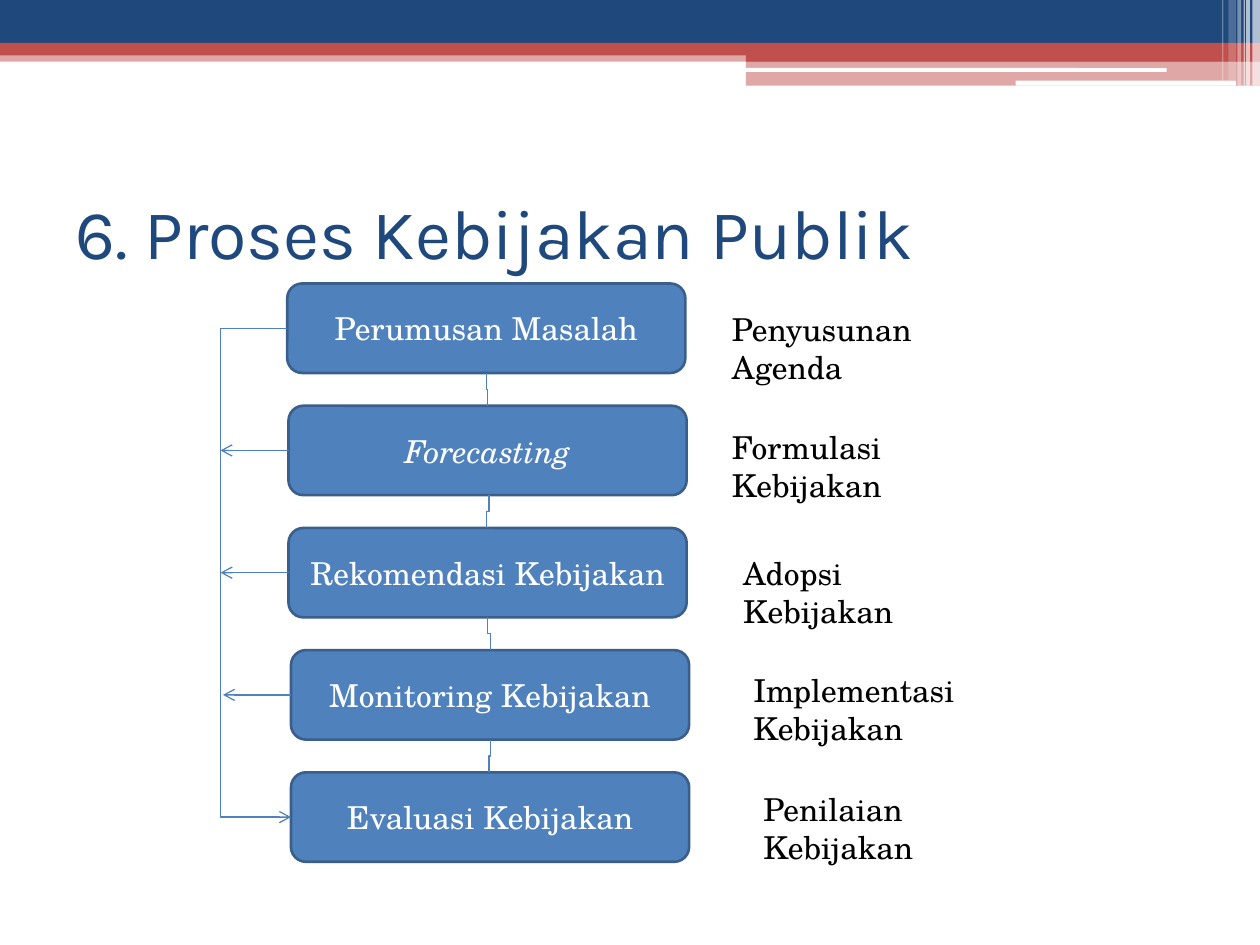
from lxml.etree import SubElement
from pptx import Presentation
from pptx.dml.color import RGBColor
from pptx.enum.shapes import MSO_CONNECTOR, MSO_SHAPE
from pptx.enum.text import MSO_ANCHOR, PP_ALIGN
from pptx.oxml.ns import qn
from pptx.util import Inches, Pt

NAVY, RED, WHITE, BLUE = "1F497D", "C0504D", "FFFFFF", "4F81BD"
BODY_FONT = "TeX Gyre Schola"
RECT, ROUND = MSO_SHAPE.RECTANGLE, MSO_SHAPE.ROUNDED_RECTANGLE

# Header decoration: shape, left, top, width, height, colour, opacity in percent
HEADER = [
    (RECT, 0, 0.4, 10, 0.09, RED, 50),
    (RECT, 0, 0, 10, 0.34, NAVY, 100),
    (RECT, 0, 0.34, 10, 0.1, RED, 100),
    (RECT, 5.92, 0.39, 4.08, 0.1, RED, 100),
    (RECT, 5.92, 0.48, 4.08, 0.2, RED, 50),
    (ROUND, 5.91, 0.54, 3.35, 0.03, WHITE, 100),
    (ROUND, 8.06, 0.64, 1.75, 0.04, WHITE, 100),
    (RECT, 9.94, 0, 0.06, 0.68, WHITE, 65),
    (RECT, 9.89, 0, 0.03, 0.68, WHITE, 65),
    (RECT, 9.87, 0, 0.01, 0.68, WHITE, 60),
    (RECT, 9.82, 0, 0.03, 0.68, WHITE, 40),
    (RECT, 9.75, 0, 0.06, 0.64, WHITE, 20),
    (RECT, 9.7, 0, 0.01, 0.64, WHITE, 30),
]
TITLE = "6. Proses Kebijakan Publik"
# Steps: text, italic, left
STEPS = [
    ("Perumusan Masalah", False, 2.28),
    ("Forecasting", True, 2.29),
    ("Rekomendasi Kebijakan", False, 2.29),
    ("Monitoring Kebijakan", False, 2.31),
    ("Evaluasi Kebijakan", False, 2.31),
]
# Policy stages: text, left, top, width
STAGES = [
    ("Penyusunan Agenda", 5.71, 2.41, 2.26),
    ("Formulasi Kebijakan", 5.71, 3.35, 2.23),
    ("Adopsi Kebijakan", 5.8, 4.35, 1.93),
    ("Implementasi Kebijakan", 5.88, 5.28, 2.62),
    ("Penilaian Kebijakan", 5.96, 6.22, 2.16),
]
LINKS = [(3.86, 3.87), (3.88, 3.86), (3.87, 3.89), (3.89, 3.88)]  # x from, x to
FEEDBACK_ENDS = [1.75, 1.75, 1.77]
BOX_TOP, BOX_W, BOX_H, PITCH = 2.25, 3.16, 0.71, 0.97
LOOP_X = 1.75


def rgb(color):
    return RGBColor.from_string(color)


def add_block(kind, left, top, width, height, color, opacity=100):
    sp = s.shapes.add_shape(kind, Inches(left), Inches(top), Inches(width), Inches(height))
    sp.shadow.inherit = False
    sp.fill.solid()
    sp.fill.fore_color.rgb = rgb(color)
    sp.line.fill.background()
    if opacity < 100:
        clr = sp.fill._xPr.find(qn("a:solidFill"))[0]
        SubElement(clr, qn("a:alpha"), val=str(opacity * 1000))
    return sp


def add_run(tf, text, size, font, color, italic=None, align=PP_ALIGN.LEFT):
    p = tf.paragraphs[0]
    p.alignment = align
    r = p.add_run()
    r.text = text
    r.font.size, r.font.name, r.font.italic = Pt(size), font, italic
    r.font.color.rgb = rgb(color)


def add_line(kind, x1, y1, x2, y2, arrow=False):
    cx = s.shapes.add_connector(kind, Inches(x1), Inches(y1), Inches(x2), Inches(y2))
    cx.line.color.rgb = rgb(BLUE)
    cx.line.width = Pt(0.75)
    if arrow:
        SubElement(cx.line._get_or_add_ln(), qn("a:tailEnd"), type="arrow")
    SubElement(cx._element.spPr, qn("a:effectLst"))
    return cx


def add_down_link(x1, y1, x2, y2):
    """Elbow that leaves downwards: a horizontal elbow turned a quarter."""
    length, shift = y2 - y1, abs(x2 - x1)
    mid_x, mid_y = (x1 + x2) / 2, (y1 + y2) / 2
    cx = add_line(MSO_CONNECTOR.ELBOW, mid_x - length / 2, mid_y - shift / 2,
                  mid_x + length / 2, mid_y + shift / 2)
    xfrm = cx._element.spPr.find(qn("a:xfrm"))
    if x2 > x1:
        xfrm.set("rot", str(270 * 60000))
        xfrm.set("flipH", "1")
    else:
        xfrm.set("rot", str(90 * 60000))


prs = Presentation()
prs.slide_width, prs.slide_height = Inches(10), Inches(7.5)
s = prs.slides.add_slide(prs.slide_layouts[5])

# Header
for block in HEADER:
    add_block(*block)

# Title
title = s.shapes.title
title.left, title.top, title.width, title.height = map(Inches, (0.5, 1.25, 9, 1.17))
title.text_frame.vertical_anchor = MSO_ANCHOR.MIDDLE
add_run(title.text_frame, TITLE, 40, "Karla", NAVY)

# Step boxes
tops = [BOX_TOP + i * PITCH for i in range(len(STEPS))]
boxes = []
for (text, italic, left), top in zip(STEPS, tops):
    box = add_block(ROUND, left, top, BOX_W, BOX_H, BLUE)
    box.line.color.rgb = rgb("3A5F8C")
    box.line.width = Pt(1.5)
    box.text_frame.word_wrap = True
    box.text_frame.vertical_anchor = MSO_ANCHOR.MIDDLE
    add_run(box.text_frame, text, 18, BODY_FONT, WHITE, italic, PP_ALIGN.CENTER)
    boxes.append(box)

# Links between consecutive steps
for (x1, x2), top, next_top in zip(LINKS, tops, tops[1:]):
    add_down_link(x1, top + BOX_H, x2, next_top)

# Feedback arrows from the middle steps
for box, (_, _, left), top, end_x in zip(boxes[1:], STEPS[1:], tops[1:], FEEDBACK_ENDS):
    y = top + BOX_H / 2
    cx = add_line(MSO_CONNECTOR.STRAIGHT, left, y, end_x, y, arrow=True)
    cx.begin_connect(box, 1)

# Loop from the first step to the last, bending out to LOOP_X
first_x, last_x = STEPS[0][2], STEPS[-1][2]
loop = add_line(MSO_CONNECTOR.ELBOW, first_x, tops[0] + BOX_H / 2,
                last_x, tops[-1] + BOX_H / 2, arrow=True)
bend = round((LOOP_X - first_x) / (last_x - first_x) * 100000)
av = loop._element.spPr.find(qn("a:prstGeom")).get_or_add_avLst()
SubElement(av, qn("a:gd"), name="adj1", fmla=f"val {bend}")

# Policy stages
for text, left, top, width in STAGES:
    tb = s.shapes.add_textbox(Inches(left), Inches(top), Inches(width), Inches(0.38))
    tb.text_frame.word_wrap = True
    add_run(tb.text_frame, text, 18, BODY_FONT, "000000")

prs.save("out.pptx")
